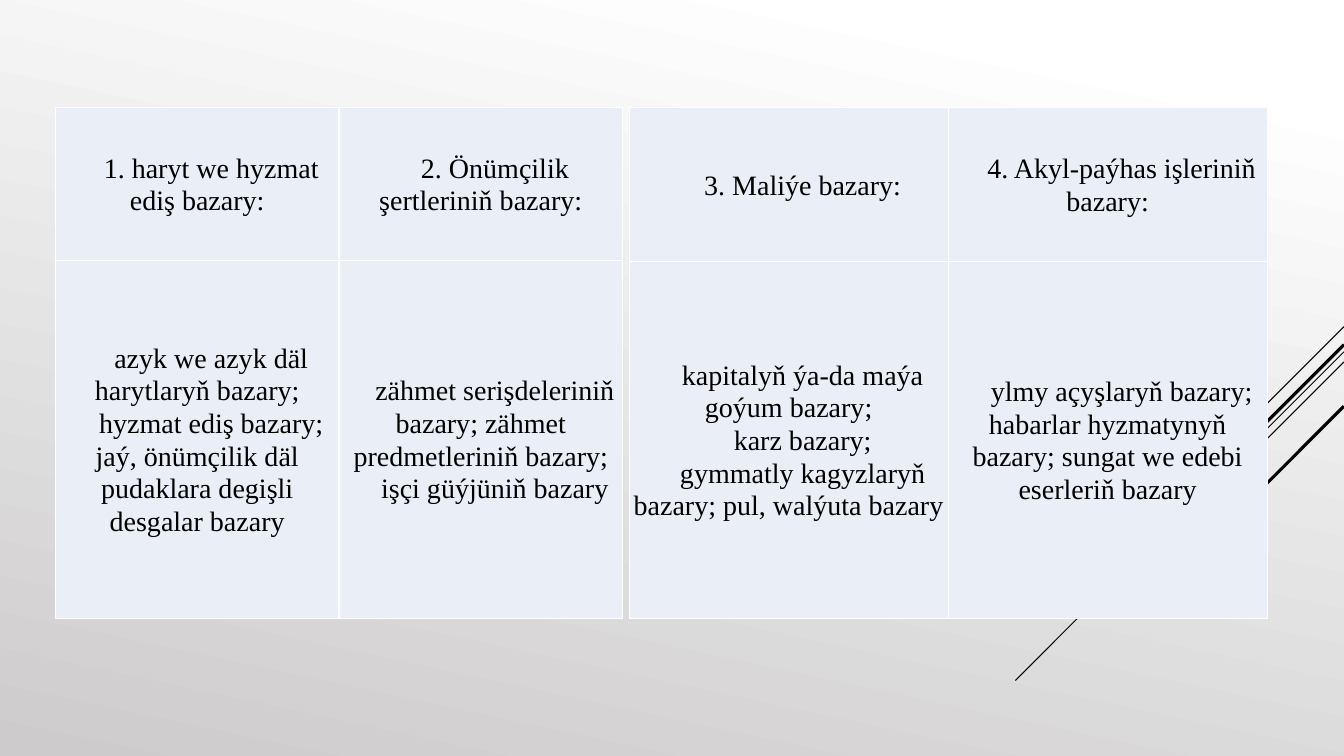
from dataclasses import dataclass

from lxml.etree import SubElement
from pptx import Presentation
from pptx.dml.color import RGBColor
from pptx.enum.shapes import MSO_CONNECTOR
from pptx.enum.text import MSO_ANCHOR, PP_ALIGN
from pptx.oxml.ns import qn
from pptx.util import Pt


@dataclass(frozen=True)
class Theme:
    ink: str = "000000"
    cell: str = "EAEFF7"
    border: str = "FFFFFF"
    light: str = "FFFFFF"
    dark: str = "CDCBCB"
    font: str = "Times New Roman"
    size: float = 20


def write(para, text, *, font, size, color, indent=0, spacing=1.0,
          align=PP_ALIGN.CENTER):
    """Put one formatted span of text into a paragraph."""
    para.alignment = align
    para.line_spacing = spacing
    para._p.get_or_add_pPr().set("indent", str(Pt(indent)))
    span = para.add_run()
    span.text = text
    span.font.name = font
    span.font.size = Pt(size)
    span.font.color.rgb = RGBColor.from_string(color)


class SlideBuilder:
    def __init__(self, page, theme):
        self.page = page
        self.theme = theme

    def background(self, angle):
        fill = self.page.background.fill
        fill.gradient()
        fill.gradient_angle = angle
        colors = (self.theme.light, self.theme.dark)
        for stop, color, position in zip(fill.gradient_stops, colors, (0.1, 1)):
            stop.color.rgb = RGBColor.from_string(color)
            stop.position = position

    def diagonal(self, right, top, length, width):
        """Draw a 45-degree line running down and left from the right edge."""
        line = self.page.shapes.add_connector(
            MSO_CONNECTOR.STRAIGHT,
            Pt(right), Pt(top), Pt(right - length), Pt(top + length))
        line.line.color.rgb = RGBColor.from_string(self.theme.ink)
        line.line.width = Pt(width)
        SubElement(line._element.spPr, qn("a:effectLst"))

    def borders(self, cell, width=1):
        properties = cell._tc.get_or_add_tcPr()
        for side in ("lnL", "lnR", "lnT", "lnB"):
            edge = SubElement(properties, qn(f"a:{side}"), w=str(Pt(width)))
            solid = SubElement(edge, qn("a:solidFill"))
            SubElement(solid, qn("a:srgbClr"), val=self.theme.border)

    def cell(self, cell, paragraphs):
        self.borders(cell)
        cell.fill.solid()
        cell.fill.fore_color.rgb = RGBColor.from_string(self.theme.cell)
        cell.vertical_anchor = MSO_ANCHOR.MIDDLE
        cell.margin_left = cell.margin_right = Pt(0.7)
        cell.margin_top = cell.margin_bottom = Pt(0)
        frame = cell.text_frame
        for index, text in enumerate(paragraphs):
            para = frame.add_paragraph() if index else frame.paragraphs[0]
            write(para, text, font=self.theme.font, size=self.theme.size,
                  color=self.theme.ink, indent=20, spacing=1.05)

    def table(self, left, top, column_width, row_heights, rows):
        columns = len(rows[0])
        table = self.page.shapes.add_table(
            len(rows), columns, Pt(left), Pt(top),
            Pt(column_width * columns), Pt(sum(row_heights))).table
        for column in table.columns:
            column.width = Pt(column_width)
        for row, height, contents in zip(table.rows, row_heights, rows):
            row.height = Pt(height)
            for cell, paragraphs in zip(row.cells, contents):
                self.cell(cell, paragraphs)


WIDTH, HEIGHT = 960, 540

# Top on the right edge, horizontal reach, line width
DIAGONALS = [
    (233.3, 72, 0.75),
    (251.3, 234.7, 0.75),
    (258.5, 149, 0.75),
    (246.2, 137.5, 2.25),
    (290.2, 100, 2.25),
]

GOODS_AND_FACTORS = [
    [["1. haryt we hyzmat ediş bazary:"],
     ["2. Önümçilik şertleriniň bazary:"]],
    [["azyk we azyk däl harytlaryň bazary;",
      "hyzmat ediş bazary; jaý, önümçilik däl pudaklara degişli "
      "desgalar bazary"],
     ["zähmet serişdeleriniň bazary; zähmet predmetleriniň bazary;",
      "işçi güýjüniň bazary"]],
]

FINANCE_AND_INTELLECT = [
    [["3. Maliýe bazary:"],
     ["4. Akyl-paýhas işleriniň bazary:"]],
    [["kapitalyň ýa-da maýa goýum bazary;",
      "karz bazary;",
      "gymmatly kagyzlaryň bazary; pul, walýuta bazary"],
     ["ylmy açyşlaryň bazary; habarlar hyzmatynyň bazary; "
      "sungat we edebi eserleriň bazary"]],
]


def main():
    deck = Presentation()
    deck.slide_width, deck.slide_height = Pt(WIDTH), Pt(HEIGHT)
    page = deck.slides.add_slide(deck.slide_layouts[6])
    builder = SlideBuilder(page, Theme())

    # Backdrop
    builder.background(angle=258)
    for top, length, width in DIAGONALS:
        builder.diagonal(WIDTH, top, length, width)

    # Market tables
    builder.table(39.6, 77, 202.6, (109, 255.8), GOODS_AND_FACTORS)
    builder.table(449.4, 77, 227.9, (110, 254.8), FINANCE_AND_INTELLECT)

    deck.save("out.pptx")


if __name__ == "__main__":
    main()
